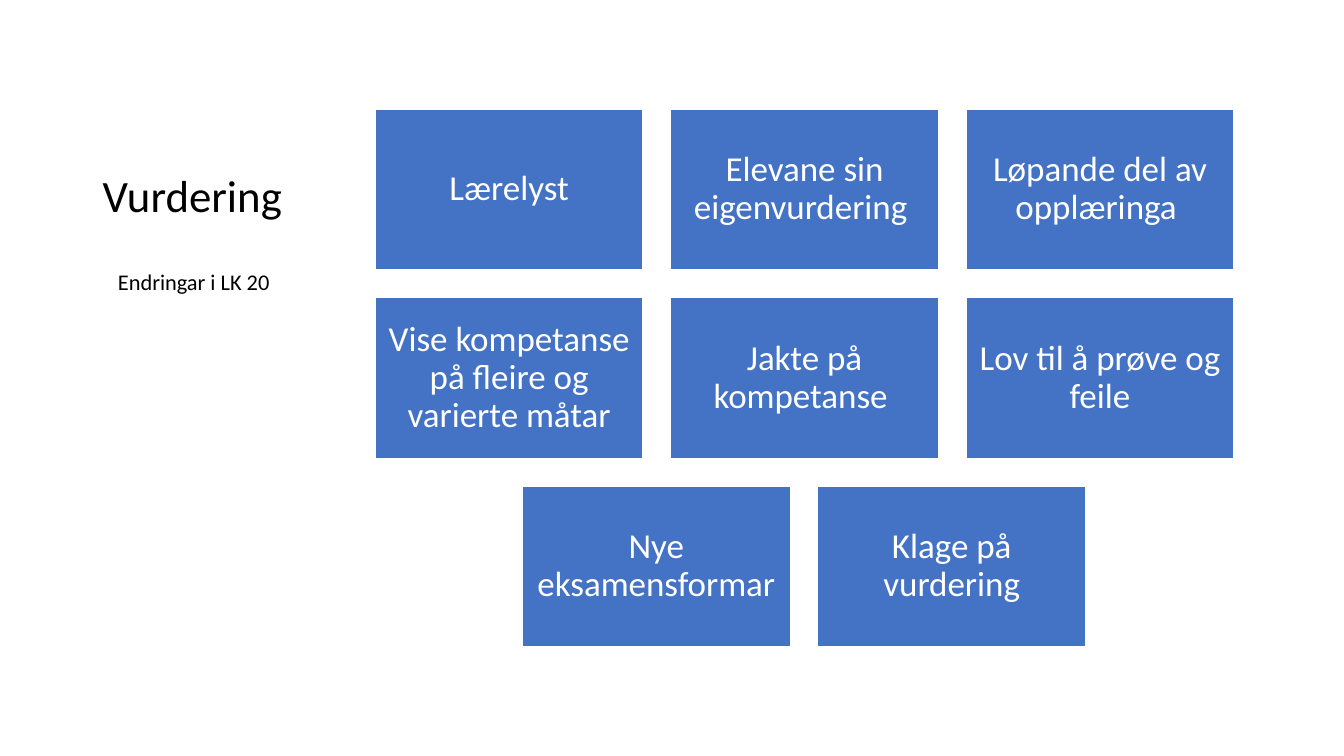
from dataclasses import dataclass

from pptx import Presentation
from pptx.dml.color import RGBColor
from pptx.enum.shapes import MSO_SHAPE as Shape
from pptx.enum.text import MSO_ANCHOR as Anchor, PP_ALIGN as Align
from pptx.util import Emu, Pt

EMU_PER_PX = 9144


def px(value):
    return Emu(value * EMU_PER_PX)


@dataclass(frozen=True)
class Theme:
    font: str = "Calibri"
    ink: str = "000000"
    paper: str = "FFFFFF"
    card: str = "4472C4"
    title_size: int = 32
    card_size: int = 25
    body_size: int = 16
    line_width: int = 1
    line_spacing: float = 0.9


class SlideBuilder:
    def __init__(self, slide, theme):
        self.slide = slide
        self.theme = theme

    def set_text(self, shape, text, size, color, align, anchor, insets):
        frame = shape.text_frame
        frame.text = text
        frame.word_wrap = True
        frame.vertical_anchor = anchor
        (frame.margin_left, frame.margin_top,
         frame.margin_right, frame.margin_bottom) = map(px, insets)
        for paragraph in frame.paragraphs:
            paragraph.alignment = align
            paragraph.line_spacing = self.theme.line_spacing
            for run in paragraph.runs:
                run.font.name = self.theme.font
                run.font.size = Pt(size)
                run.font.color.rgb = RGBColor.from_string(color)

    def text(self, box, text, size, anchor=Anchor.TOP, insets=(10, 5, 10, 5)):
        shape = self.slide.shapes.add_textbox(*map(px, box))
        self.set_text(shape, text, size, self.theme.ink, Align.LEFT, anchor, insets)

    def card(self, box, text):
        theme = self.theme
        shape = self.slide.shapes.add_shape(Shape.RECTANGLE, *map(px, box))
        shape.shadow.inherit = False
        shape.fill.solid()
        shape.fill.fore_color.rgb = RGBColor.from_string(theme.card)
        shape.line.color.rgb = RGBColor.from_string(theme.paper)
        shape.line.width = Pt(theme.line_width)
        self.set_text(shape, text, theme.card_size, theme.paper,
                      Align.CENTER, Anchor.MIDDLE, (10, 10, 10, 10))

    def card_grid(self, rows, left, top, width, height, gap):
        columns = max(map(len, rows))
        pitch = width + gap
        for row_index, row in enumerate(rows):
            row_left = left + (columns - len(row)) * pitch // 2
            row_top = top + row_index * (height + gap)
            for column_index, text in enumerate(row):
                box = (row_left + column_index * pitch, row_top, width, height)
                self.card(box, text)


CARD_ROWS = [
    ["Lærelyst", "Elevane sin eigenvurdering ", "Løpande del av opplæringa "],
    ["Vise kompetanse på fleire og varierte måtar", "Jakte på kompetanse ",
     "Lov til å prøve og feile"],
    ["Nye eksamensformar", "Klage på vurdering"],
]


def main():
    presentation = Presentation()
    presentation.slide_width = px(1333)
    presentation.slide_height = px(750)
    slide = presentation.slides.add_slide(presentation.slide_layouts[6])
    theme = Theme()
    builder = SlideBuilder(slide, theme)
    builder.text((92, 50, 230, 175), "Vurdering", theme.title_size, Anchor.BOTTOM)
    builder.card_grid(CARD_ROWS, left=372, top=108, width=266, height=160, gap=27)
    builder.text((92, 225, 230, 417), "Endringar i LK 20", theme.body_size,
                 insets=(25, 44, 10, 5))
    presentation.save("out.pptx")


if __name__ == "__main__":
    main()
